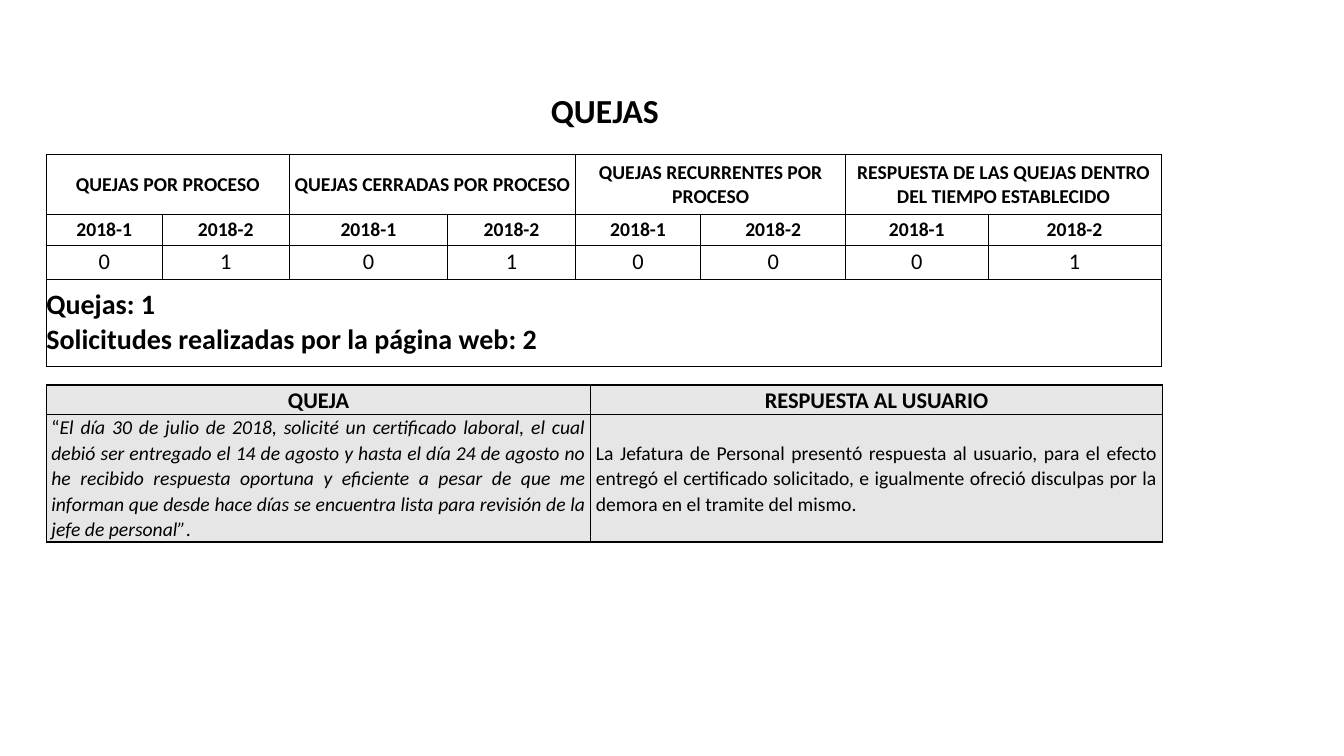
from lxml import etree
from pptx import Presentation
from pptx import util as u
from pptx.dml.color import RGBColor
from pptx.enum import text
from pptx.oxml import ns

PX = 9144
BLACK = RGBColor(0, 0, 0)
WHITE = RGBColor(255, 255, 255)
GREY = RGBColor(0xE7, 0xE6, 0xE6)
CENTER = text.PP_ALIGN.CENTER
JUSTIFY = text.PP_ALIGN.JUSTIFY
MIDDLE = text.MSO_ANCHOR.MIDDLE
TOP = text.MSO_ANCHOR.TOP

HEADINGS = [
    "QUEJAS POR PROCESO",
    "QUEJAS CERRADAS POR PROCESO",
    "QUEJAS RECURRENTES POR PROCESO",
    "RESPUESTA DE LAS QUEJAS DENTRO DEL TIEMPO ESTABLECIDO",
]
COUNTS = [0, 1, 0, 1, 0, 0, 0, 1]
TOTALS = "Quejas: 1\nSolicitudes realizadas por la página web: 2"
COMPLAINT = (
    "El día 30 de julio de 2018, solicité un certificado laboral, el cual debió "
    "ser entregado el 14 de agosto y hasta el día 24 de agosto no he recibido "
    "respuesta oportuna y eficiente a pesar de que me informan que desde hace "
    "días se encuentra lista para revisión de la jefe de personal”"
)
ANSWER = (
    "La Jefatura de Personal presentó respuesta al usuario, para el efecto "
    "entregó el certificado solicitado, e igualmente ofreció disculpas por la "
    "demora en el tramite del mismo."
)


def px(n):
    return u.Emu(n * PX)


def format_text(tf, size, bold, align, line=None, after=None):
    for p in tf.paragraphs:
        p.alignment = align
        if line:
            p.line_spacing = line
            p.space_after = u.Pt(after)
        for r in p.runs:
            r.font.name = "Calibri"
            r.font.size = u.Pt(size)
            r.font.bold = bold
            r.font.color.rgb = BLACK


def add_borders(cell, width):
    tc_pr = cell._tc.get_or_add_tcPr()
    for side in ("lnL", "lnR", "lnT", "lnB"):
        ln = etree.SubElement(tc_pr, ns.qn("a:" + side), w=str(u.Pt(width)))
        fill = etree.SubElement(ln, ns.qn("a:solidFill"))
        etree.SubElement(fill, ns.qn("a:srgbClr"), val=str(BLACK))


def add_grid(s, x, y, cols, rows, border, margin):
    sp = s.shapes.add_table(
        len(rows), len(cols), px(x), px(y), px(sum(cols)), px(sum(rows)))
    tbl = sp.table
    tbl.first_row = tbl.horz_banding = False
    for col, w in zip(tbl.columns, cols):
        col.width = px(w)
    for row, h in zip(tbl.rows, rows):
        row.height = px(h)
    for cell in tbl.iter_cells():
        cell.margin_left = cell.margin_right = px(margin)
        cell.margin_top = cell.margin_bottom = 0
        cell.vertical_anchor = MIDDLE
        add_borders(cell, border)
        cell.fill.background()
    return tbl


def fill_cell(cell, value, size, bold, align, color=None, line=None, after=None):
    cell.text_frame.text = value
    format_text(cell.text_frame, size, bold, align, line, after)
    if color is not None:
        cell.fill.solid()
        cell.fill.fore_color.rgb = color


def add_summary(s):
    tbl = add_grid(s, 46, 153, [115, 126, 157, 127, 124, 144, 141, 172],
                   [60, 30, 34, 86], 0.5, 0)
    for i, heading in enumerate(HEADINGS):
        cell = tbl.cell(0, 2 * i)
        cell.merge(tbl.cell(0, 2 * i + 1))
        fill_cell(cell, heading, 14, True, CENTER, WHITE)
    for i, count in enumerate(COUNTS):
        fill_cell(tbl.cell(1, i), f"2018-{i % 2 + 1}", 14, True, CENTER, WHITE)
        fill_cell(tbl.cell(2, i), str(count), 16, False, CENTER)
    tbl.cell(3, 0).merge(tbl.cell(3, 7))
    fill_cell(tbl.cell(3, 0), TOTALS, 20, True, JUSTIFY)


def add_answers(s):
    tbl = add_grid(s, 46, 382, [540, 567], [22, 99], 1, 5)
    for i, heading in enumerate(["QUEJA", "RESPUESTA AL USUARIO"]):
        fill_cell(tbl.cell(0, i), heading, 16, True, CENTER, GREY, 1.07, 12)
    tbl.cell(0, 1).vertical_anchor = TOP
    for i, body in enumerate(["“", ANSWER]):
        fill_cell(tbl.cell(1, i), body, 14, False, JUSTIFY, GREY, 1.07, 8)
    tf = tbl.cell(1, 0).text_frame
    for part, italic in [(COMPLAINT, True), (".", False)]:
        r = tf.paragraphs[0].add_run()
        r.text = part
        r.font.italic = italic
    format_text(tf, 14, False, JUSTIFY, 1.07, 8)


def add_title(s):
    tf = s.shapes.add_textbox(px(93), px(84), px(1014), px(50)).text_frame
    tf.word_wrap = True
    tf.auto_size = text.MSO_AUTO_SIZE.SHAPE_TO_FIT_TEXT
    tf.text = "QUEJAS"
    format_text(tf, 24, True, CENTER)


def main():
    prs = Presentation()
    prs.slide_width, prs.slide_height = px(1333), px(750)
    s = prs.slides.add_slide(prs.slide_layouts[6])
    add_summary(s)
    add_answers(s)
    add_title(s)
    prs.save("out.pptx")


if __name__ == "__main__":
    main()
